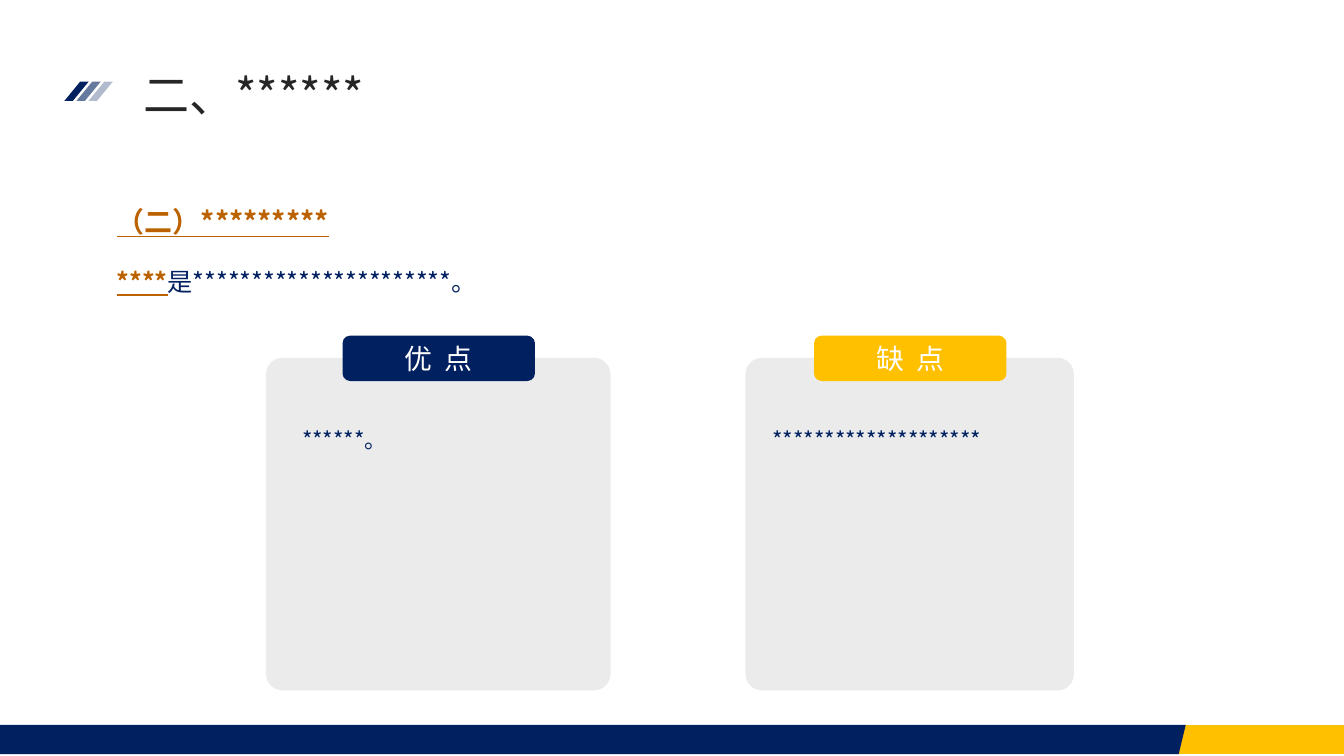
from dataclasses import dataclass

from lxml import etree
from pptx import Presentation
from pptx.dml.color import RGBColor
from pptx.enum.shapes import MSO_SHAPE
from pptx.enum.text import MSO_ANCHOR, MSO_AUTO_SIZE, PP_ALIGN
from pptx.oxml.ns import qn
from pptx.util import Pt

PX = 9144
SLIDE_W, SLIDE_H = 1334, 750


@dataclass(frozen=True)
class Theme:
    font: str = "Noto Sans CJK SC"
    ink: str = "262626"
    navy: str = "002060"
    gold: str = "FFC000"
    amber: str = "BB6100"
    panel: str = "D9D9D9"
    white: str = "FFFFFF"
    title: float = 32.9
    heading: float = 20
    label: float = 19.9
    lead: float = 18
    body: float = 16


T = Theme()

TITLE = "二、******"
HEADING = [("（二）*********", T.amber, True)]
LEAD = [("****", T.amber, True), ("是**********************。", T.navy, False)]
CARDS = [
    {"label": "优 点", "color": T.navy, "panel": (264, 342),
     "label_x": 340, "text_x": 290, "text": "******。"},
    {"label": "缺 点", "color": T.gold, "panel": (740, 326),
     "label_x": 808, "text_x": 757, "text": "********************"},
]
STRIPE_ALPHAS = [100, 60, 30]
FOOTER = [
    (T.gold, [(88, 719), (SLIDE_W, 719), (SLIDE_W, 748), (88, 748)]),
    (T.navy, [(0, 719), (1177, 719), (1170, 748), (0, 748)]),
]


def emu(*lengths):
    return [n * PX for n in lengths]


def paint(s, color, alpha=100):
    s.shadow.inherit = False
    s.line.fill.background()
    s.fill.solid()
    s.fill.fore_color.rgb = RGBColor.from_string(color)
    if alpha < 100:
        clr = s.fill._xPr.find(qn("a:solidFill"))[0]
        etree.SubElement(clr, qn("a:alpha")).set("val", str(alpha * 1000))


def add_box(shapes, kind, box, color, alpha=100, adj=None):
    s = shapes.add_shape(kind, *emu(*box))
    paint(s, color, alpha)
    if adj is not None:
        s.adjustments[0] = adj
    return s


def style(r, size, color, strong=False):
    r.font.name = T.font
    r.font.size = Pt(size)
    r.font.color.rgb = RGBColor.from_string(color)
    r.font.bold = strong
    r.font.underline = strong
    latin = r._r.rPr.find(qn("a:latin"))
    ea = etree.Element(qn("a:ea"))
    ea.set("typeface", T.font)
    latin.addnext(ea)


def write(s, runs, size, align=PP_ALIGN.LEFT, anchor=MSO_ANCHOR.TOP,
          spacing=None, before=0):
    tf = s.text_frame
    tf.word_wrap = True
    tf.vertical_anchor = anchor
    p = tf.paragraphs[0]
    p.alignment = align
    p.space_before = Pt(before)
    if spacing:
        p.line_spacing = spacing
    for text, color, strong in runs:
        r = p.add_run()
        r.text = text
        style(r, size, color, strong)
    return tf


def add_text(shapes, box, runs, size, before=0):
    s = shapes.add_textbox(*emu(*box))
    write(s, runs, size, spacing=1.5, before=before)


def add_title(slide):
    s = slide.shapes.title
    s.left, s.top, s.width, s.height = emu(132, 61, 720, 65)
    tf = write(s, [(TITLE, T.ink, False)], T.title)
    tf.auto_size = MSO_AUTO_SIZE.SHAPE_TO_FIT_TEXT


def add_stripes(slide):
    group = slide.shapes.add_group_shape()
    for i, alpha in enumerate(STRIPE_ALPHAS):
        add_box(group.shapes, MSO_SHAPE.PARALLELOGRAM,
                (64 + 12 * i, 81, 24, 19), T.navy, alpha, 0.82)


def add_footer(slide):
    for color, points in FOOTER:
        fb = slide.shapes.build_freeform(*points[0], scale=PX)
        fb.add_line_segments(points[1:], close=True)
        paint(fb.convert_to_shape(), color)


def add_card(slide, card):
    shapes = slide.shapes.add_group_shape().shapes
    x, w = card["panel"]
    add_box(shapes, MSO_SHAPE.ROUNDED_RECTANGLE, (x, 355, w, 330),
            T.panel, 51, 0.05)
    label = add_box(shapes, MSO_SHAPE.ROUNDED_RECTANGLE,
                    (card["label_x"], 333, 191, 45), card["color"])
    tf = write(label, [(card["label"], T.white, False)], T.label,
               PP_ALIGN.CENTER, MSO_ANCHOR.MIDDLE)
    tf.paragraphs[0].runs[0]._r.rPr.set("spc", "200")
    add_text(shapes, (card["text_x"], 405, 292, 50),
             [(card["text"], T.navy, False)], T.body)


def main():
    prs = Presentation()
    prs.slide_width, prs.slide_height = emu(SLIDE_W, SLIDE_H)
    slide = prs.slides.add_slide(prs.slide_layouts[5])
    add_title(slide)
    add_stripes(slide)
    add_footer(slide)
    add_text(slide.shapes, (106, 181, 1122, 62), HEADING, T.heading, 10)
    add_text(slide.shapes, (106, 244, 1122, 88), LEAD, T.lead, 10)
    for card in CARDS:
        add_card(slide, card)
    prs.save("out.pptx")


if __name__ == "__main__":
    main()
